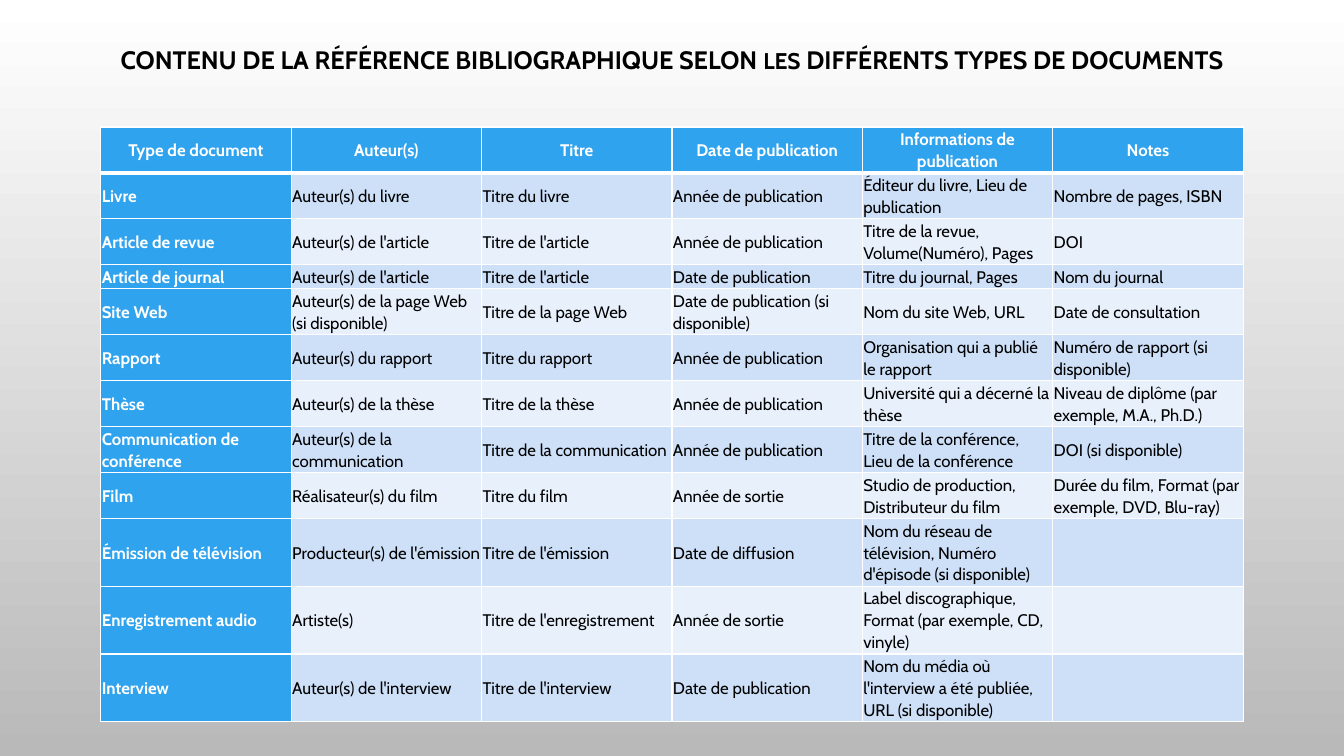
import pptx
import pptx.dml.color
import pptx.enum.text
import pptx.oxml
import pptx.oxml.ns
import pptx.util

Inches, Pt = pptx.util.Inches, pptx.util.Pt
CENTER = pptx.enum.text.PP_ALIGN.CENTER
LEFT = pptx.enum.text.PP_ALIGN.LEFT
MIDDLE = pptx.enum.text.MSO_ANCHOR.MIDDLE

TITLE = [
    ("CONTENU DE LA RÉFÉRENCE BIBLIOGRAPHIQUE SELON ", 18),
    ("LES", 16.2),
    (" DIFFÉRENTS TYPES DE DOCUMENTS", 18),
]

# Number of text lines in the tallest cell, then the cells of the row
REFERENCES = [
    (2, ["Type de document", "Auteur(s)", "Titre", "Date de publication",
         "Informations de publication", "Notes"]),
    (2, ["Livre", "Auteur(s) du livre", "Titre du livre", "Année de publication",
         "Éditeur du livre, Lieu de publication", "Nombre de pages, ISBN"]),
    (2, ["Article de revue", "Auteur(s) de l'article", "Titre de l'article",
         "Année de publication", "Titre de la revue, Volume(Numéro), Pages", "DOI"]),
    (1, ["Article de journal", "Auteur(s) de l'article", "Titre de l'article",
         "Date de publication", "Titre du journal, Pages", "Nom du journal"]),
    (2, ["Site Web", "Auteur(s) de la page Web (si disponible)", "Titre de la page Web",
         "Date de publication (si disponible)", "Nom du site Web, URL",
         "Date de consultation"]),
    (2, ["Rapport", "Auteur(s) du rapport", "Titre du rapport", "Année de publication",
         "Organisation qui a publié le rapport", "Numéro de rapport (si disponible)"]),
    (2, ["Thèse", "Auteur(s) de la thèse", "Titre de la thèse", "Année de publication",
         "Université qui a décerné la thèse",
         "Niveau de diplôme (par exemple, M.A., Ph.D.)"]),
    (2, ["Communication de conférence", "Auteur(s) de la communication",
         "Titre de la communication", "Année de publication",
         "Titre de la conférence, Lieu de la conférence", "DOI (si disponible)"]),
    (2, ["Film", "Réalisateur(s) du film", "Titre du film", "Année de sortie",
         "Studio de production, Distributeur du film",
         "Durée du film, Format (par exemple, DVD, Blu-ray)"]),
    (3, ["Émission de télévision", "Producteur(s) de l'émission", "Titre de l'émission",
         "Date de diffusion",
         "Nom du réseau de télévision, Numéro d'épisode (si disponible)", ""]),
    (3, ["Enregistrement audio", "Artiste(s)", "Titre de l'enregistrement",
         "Année de sortie", "Label discographique, Format (par exemple, CD, vinyle)", ""]),
    (3, ["Interview", "Auteur(s) de l'interview", "Titre de l'interview",
         "Date de publication",
         "Nom du média où l'interview a été publiée, URL (si disponible)", ""]),
]


def rgb(color):
    return pptx.dml.color.RGBColor.from_string(color)


class ReferenceSlide:
    font = "Cabin"
    black, white, accent = "000000", "FFFFFF", "2FA3EE"
    bands = ("E8F0FC", "CDE0F8")
    left, width = 1, 11.33

    def __init__(self, deck):
        self.slide = deck.slides.add_slide(deck.slide_layouts[5])

    def background(self, top, bottom):
        fill = self.slide.background.fill
        fill.gradient()
        fill.gradient_angle = 270
        for stop, color in zip(fill.gradient_stops, (top, bottom)):
            stop.color.rgb = rgb(color)

    def add_run(self, paragraph, text, size, color, bold):
        run = paragraph.add_run()
        run.text = text
        run.font.name = self.font
        run.font.size = Pt(size)
        run.font.bold = bold
        run.font.color.rgb = rgb(color)

    def title(self, runs, top, height):
        title = self.slide.shapes.title
        title.left, title.top = Inches(self.left), Inches(top)
        title.width, title.height = Inches(self.width), Inches(height)
        frame = title.text_frame
        frame.word_wrap = True
        frame.auto_size = pptx.enum.text.MSO_AUTO_SIZE.NONE
        frame.vertical_anchor = MIDDLE
        paragraph = frame.paragraphs[0]
        paragraph.alignment = CENTER
        paragraph.line_spacing = 0.9
        for text, size in runs:
            self.add_run(paragraph, text, size, self.black, True)

    def borders(self, cell, top=1, bottom=1):
        """Draw white borders; call before the fill, which must follow them."""
        properties = cell._tc.get_or_add_tcPr()
        for side, points in (("L", 1), ("R", 1), ("T", top), ("B", bottom)):
            properties.append(pptx.oxml.parse_xml(
                f'<a:ln{side} {pptx.oxml.ns.nsdecls("a")} w="{Pt(points)}">'
                f'<a:solidFill><a:srgbClr val="{self.white}"/></a:solidFill>'
                f'</a:ln{side}>'))

    def cell(self, cell, text, row, column):
        heading = row == 0 or column == 0
        self.borders(cell, top=3 if row == 1 else 1, bottom=3 if row == 0 else 1)
        cell.fill.solid()
        cell.fill.fore_color.rgb = rgb(self.accent if heading else self.bands[row % 2])
        cell.margin_left = cell.margin_right = Inches(0.01)
        cell.margin_top = cell.margin_bottom = Inches(0.01)
        cell.vertical_anchor = MIDDLE
        paragraph = cell.text_frame.paragraphs[0]
        paragraph.alignment = CENTER if row == 0 else LEFT
        paragraph.line_spacing = 1.07
        if text:
            self.add_run(paragraph, text, 12, self.white if heading else self.black, heading)

    def table(self, rows, top):
        heights = [0.22 * lines + 0.01 for lines, _ in rows]
        columns = len(rows[0][1])
        table = self.slide.shapes.add_table(
            len(rows), columns, Inches(self.left), Inches(top),
            Inches(self.width), Inches(sum(heights))).table
        table.first_col = True
        for column in table.columns:
            column.width = Inches(self.width / columns)
        for r, (_, texts) in enumerate(rows):
            table.rows[r].height = Inches(heights[r])
            for c, text in enumerate(texts):
                self.cell(table.cell(r, c), text, r, c)


def main():
    deck = pptx.Presentation()
    deck.slide_width, deck.slide_height = Inches(13.33), Inches(7.5)
    page = ReferenceSlide(deck)
    page.background("FFFFFF", "B9B9B9")
    page.title(TITLE, 0.39, 0.43)
    page.table(REFERENCES, 1.26)
    deck.save("out.pptx")


if __name__ == "__main__":
    main()
